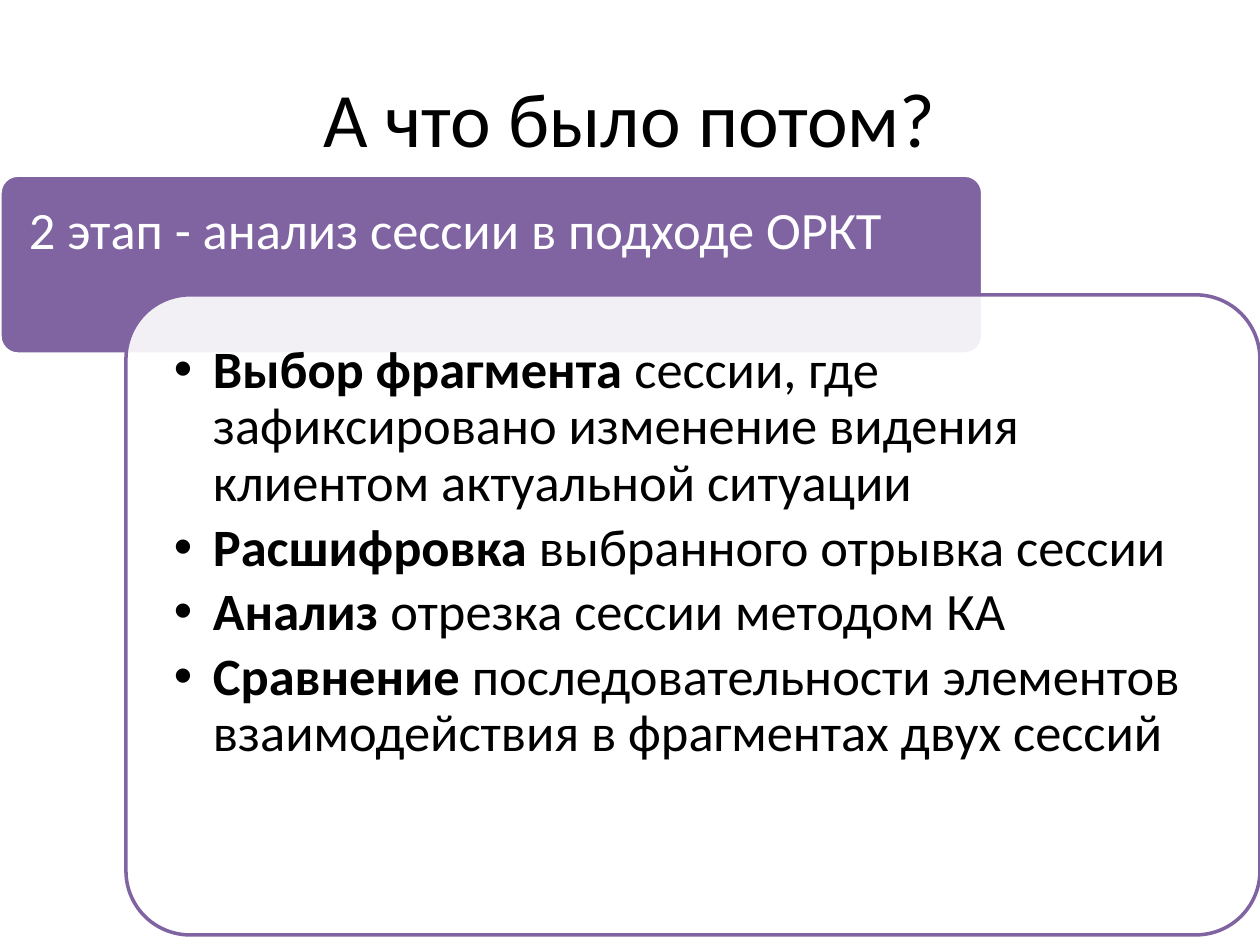
from typing import NamedTuple

from lxml import etree
from pptx import Presentation
from pptx import util as u
from pptx.dml.color import RGBColor
from pptx.enum import shapes, text
from pptx.oxml import ns

PURPLE, WHITE, BLACK = "8064A2", "FFFFFF", "000000"


class Box(NamedTuple):
    left: float
    top: float
    width: float
    height: float


class Panel(NamedTuple):
    box: Box
    fill: str
    line: str
    alpha: int


class Step(NamedTuple):
    lead: str
    rest: str


PANELS = [
    Panel(Box(0, 1.39, 7.8, 1.42), PURPLE, WHITE, 100),
    Panel(Box(1, 2.34, 9, 5.08), WHITE, PURPLE, 90),
]
STEPS = [
    Step("Выбор фрагмента", " сессии, где зафиксировано изменение видения "
         "клиентом актуальной ситуации"),
    Step("Расшифровка", " выбранного отрывка сессии"),
    Step("Анализ", " отрезка сессии методом КА"),
    Step("Сравнение ", "последовательности элементов взаимодействия "
         "в фрагментах двух сессий"),
]


def rgb(code: str) -> RGBColor:
    return RGBColor.from_string(code)


def apply(item, **values) -> None:
    for name, value in values.items():
        setattr(item, name, value)


def place(shape, box: Box) -> None:
    apply(shape, **{k: u.Inches(v) for k, v in box._asdict().items()})


def add_panel(slide, panel: Panel) -> None:
    shape = slide.shapes.add_shape(
        shapes.MSO_SHAPE.ROUNDED_RECTANGLE, *map(u.Inches, panel.box))
    shape.adjustments[0] = 0.1
    shape.shadow.inherit = False
    shape.fill.solid()
    shape.fill.fore_color.rgb = rgb(panel.fill)
    shape.line.color.rgb = rgb(panel.line)
    shape.line.width = u.Pt(2)
    if panel.alpha < 100:
        tint = shape.element.spPr.find(ns.qn("a:solidFill"))[0]
        etree.SubElement(tint, ns.qn("a:alpha"), val=str(panel.alpha * 1000))


def set_frame(frame, bottom: float) -> None:
    side = u.Inches(0.23)
    apply(frame, word_wrap=True, auto_size=text.MSO_AUTO_SIZE.NONE,
          vertical_anchor=text.MSO_ANCHOR.TOP, margin_left=side,
          margin_right=side, margin_top=side, margin_bottom=u.Inches(bottom))


def add_run(para, words: str, size: int, color: str, bold: bool = False) -> None:
    run = para.add_run()
    run.text = words
    apply(run.font, name="Calibri", size=u.Pt(size), bold=bold)
    run.font.color.rgb = rgb(color)


def set_bullet(para) -> None:
    props = para._p.get_or_add_pPr()
    indent = u.Inches(0.31)
    props.set("marL", str(indent))
    props.set("indent", str(-indent))
    etree.SubElement(props, ns.qn("a:buChar"), char="•")


def add_title(slide) -> None:
    title = slide.shapes.title
    place(title, Box(0.5, 0.3, 9, 1.25))
    title.text_frame.vertical_anchor = text.MSO_ANCHOR.MIDDLE
    para = title.text_frame.paragraphs[0]
    para.alignment = text.PP_ALIGN.CENTER
    add_run(para, "А что было потом?", 44, BLACK)


def add_stage(slide) -> None:
    stage = slide.shapes.add_textbox(*map(u.Inches, Box(0, 1.39, 7.8, 0.94)))
    set_frame(stage.text_frame, 0.12)
    para = stage.text_frame.paragraphs[0]
    apply(para, line_spacing=0.9, space_after=u.Pt(10.5))
    add_run(para, "2 этап - анализ сессии в подходе ОРКТ", 30, WHITE)


def add_steps(slide) -> None:
    body = slide.placeholders[1]
    place(body, Box(1.15, 2.49, 8.7, 4.78))
    # Bring the list in front of the panels
    slide.shapes.element.append(body.element)
    frame = body.text_frame
    set_frame(frame, 0.23)
    for i, step in enumerate(STEPS):
        para = frame.add_paragraph() if i else frame.paragraphs[0]
        apply(para, level=1, line_spacing=0.9,
              space_before=u.Pt(0), space_after=u.Pt(4.5))
        set_bullet(para)
        add_run(para, step.lead, 30, BLACK, True)
        add_run(para, step.rest, 30, BLACK)


def main() -> None:
    deck = Presentation()
    apply(deck, slide_width=u.Inches(10), slide_height=u.Inches(7.5))
    slide = deck.slides.add_slide(deck.slide_layouts[1])
    add_title(slide)
    for panel in PANELS:
        add_panel(slide, panel)
    add_stage(slide)
    add_steps(slide)
    deck.save("out.pptx")


if __name__ == "__main__":
    main()
